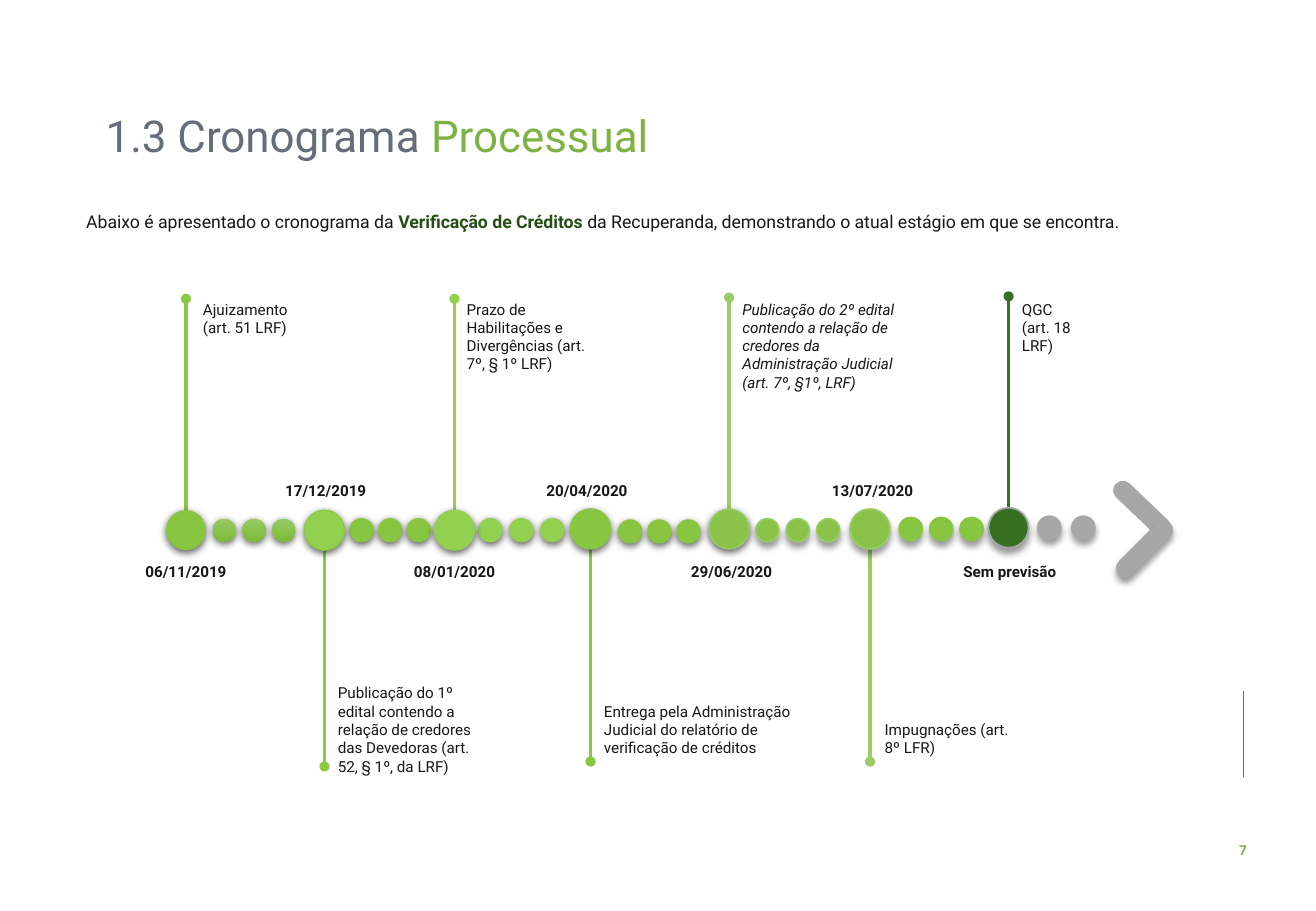
import pptx
import pptx.dml.color
import pptx.enum.shapes
import pptx.enum.text
import pptx.oxml
import pptx.oxml.ns
import pptx.util
from pptx.util import Inches

RGBColor = pptx.dml.color.RGBColor
SHAPE = pptx.enum.shapes.MSO_SHAPE
ALIGN = pptx.enum.text.PP_ALIGN
ANCHOR = pptx.enum.text.MSO_ANCHOR

INK = RGBColor(0x18, 0x17, 0x17)
SLATE = RGBColor(0x65, 0x6D, 0x78)
GREY = RGBColor(0xA7, 0xA7, 0xA7)
ACCENT = RGBColor(0x7C, 0xB3, 0x42)
FOREST = RGBColor(0x26, 0x4F, 0x17)
DARK = RGBColor(0x37, 0x70, 0x23)
LEAF = RGBColor(0x88, 0xC6, 0x41)
LEAF_LIGHT = RGBColor(0x8B, 0xC9, 0x44)
LIME = RGBColor(0x92, 0xD0, 0x50)
OLIVE = RGBColor(0x8B, 0xC3, 0x4A)
PALE = RGBColor(0x9C, 0xCC, 0x65)
SHADE_TOP = RGBColor(0x98, 0xCA, 0x65)
SHADE_BOTTOM = RGBColor(0x7C, 0xB9, 0x36)

# opacity %, blur pt, distance pt, rim width pt
TIGHT = (63, 4.5, 1.5, 0.75)
SOFT = (40, 4, 3, 1)

AXIS_Y = 4.36
MARKER_SIZE = 0.33
DOT_SIZE = 0.19
DATE_WIDTH = 1.1

# stem x, knob y, stem colour, marker (top, fill, rim, effect),
# date, date centre, event paragraphs, event box (left, top, width, height)
MILESTONES = [
    (1.53, 2.46, LEAF_LIGHT, (4.2, LEAF, None, TIGHT), "06/11/2019", 1.53,
     ["Ajuizamento (art. 51 LRF)"], (1.58, 2.42, 1.12, 0.4)),
    (2.67, 6.31, LEAF_LIGHT, (4.2, LIME, LEAF_LIGHT, TIGHT), "17/12/2019", 2.68,
     ["Publicação do 1º edital contendo a relação de credores das Devedoras "
      "(art. 52, § 1º, da LRF)"], (2.69, 5.58, 1.43, 0.71)),
    (3.74, 2.46, LIME, (4.2, LIME, LIME, TIGHT), "08/01/2020", 3.74,
     ["Prazo de Habilitações e Divergências (art. 7º, § 1º LRF)"],
     (3.75, 2.42, 1.3, 0.56)),
    (4.86, 6.27, LEAF, (4.19, LEAF, LEAF, TIGHT), "20/04/2020", 4.83,
     ["Entrega pela Administração Judicial do relatório de verificação de "
      "créditos"], (4.88, 5.73, 1.78, 0.56)),
    (6, 2.45, PALE, (4.19, OLIVE, PALE, TIGHT), "29/06/2020", 6.02,
     ["Publicação do 2º edital contendo a relação de credores da "
      "Administração Judicial (art. 7º, §1º, LRF)"], (6.02, 2.42, 1.57, 0.71)),
    (7.16, 6.27, PALE, (4.19, OLIVE, PALE, SOFT), "13/07/2020", 7.18,
     ["Impugnações (art. 8º LFR)"], (7.19, 5.88, 1.24, 0.4)),
    (8.3, 2.44, DARK, (4.18, DARK, GREY, SOFT), "Sem previsão", 8.31,
     ["QGC", "(art. 18 LRF)"], (8.32, 2.42, 0.8, 0.4)),
]
ITALIC_EVENT = "29/06/2020"

# first left, step, count, top, fill (a list is a gradient), rim, effect
DOT_RUNS = [
    (1.75, 0.245, 3, 4.27, [SHADE_TOP, SHADE_BOTTOM], None, TIGHT),
    (2.88, 0.235, 3, 4.27, LEAF, LEAF, TIGHT),
    (3.94, 0.255, 3, 4.27, LIME, LIME, TIGHT),
    (5.09, 0.24, 3, 4.28, LEAF, LEAF, TIGHT),
    (6.22, 0.25, 3, 4.27, OLIVE, PALE, SOFT),
    (7.4, 0.25, 3, 4.26, LEAF, LEAF, SOFT),
    (8.54, 0.28, 2, 4.25, GREY, GREY, SOFT),
]


def add_xml(parent, tag, **attributes):
    node = parent.makeelement(pptx.oxml.ns.qn(tag),
                              {k: str(v) for k, v in attributes.items()})
    parent.append(node)
    return node


class TimelineSlide:
    font = "Roboto"
    inset = (0.09, 0.05)

    def __init__(self, slide):
        self.slide = slide

    def text(self, box, paragraphs, anchor=ANCHOR.TOP, **paragraph_format):
        """Each paragraph is a list of (text, font values) runs."""
        area = self.slide.shapes.add_textbox(*map(Inches, box))
        frame = area.text_frame
        side, edge = map(Inches, self.inset)
        settings = {"word_wrap": True, "vertical_anchor": anchor,
                    "margin_left": side, "margin_right": side,
                    "margin_top": edge, "margin_bottom": edge}
        for name, value in settings.items():
            setattr(frame, name, value)
        for index, runs in enumerate(paragraphs):
            paragraph = frame.add_paragraph() if index else frame.paragraphs[0]
            for name, value in paragraph_format.items():
                setattr(paragraph, name, value)
            for words, values in runs:
                run = paragraph.add_run()
                run.text = words
                style = {"name": self.font, "size": 9, "color": INK, **values}
                run.font.color.rgb = style.pop("color")
                style["size"] = pptx.util.Pt(style["size"])
                for name, value in style.items():
                    setattr(run.font, name, value)
        return frame

    def line(self, start, end, color, width, oval_start=False):
        connector = self.slide.shapes.add_connector(
            pptx.enum.shapes.MSO_CONNECTOR.STRAIGHT,
            *map(Inches, (*start, *end)))
        connector.line.color.rgb = color
        connector.line.width = pptx.util.Pt(width)
        if oval_start:
            add_xml(connector.line._ln, "a:headEnd", type="oval")
        add_xml(connector._element.spPr, "a:effectLst")

    def shape(self, kind, box, fill, rim=None, effect=None):
        figure = self.slide.shapes.add_shape(kind, *map(Inches, box))
        if isinstance(fill, list):
            figure.fill.gradient()
            figure.fill.gradient_angle = 270
            for stop, color in zip(figure.fill.gradient_stops, fill):
                stop.color.rgb = color
        else:
            figure.fill.solid()
            figure.fill.fore_color.rgb = fill
        if rim is None:
            figure.line.fill.background()
        else:
            figure.line.color.rgb = rim
            figure.line.width = pptx.util.Pt(effect[3])
        figure.shadow.inherit = False
        if effect:
            self.drop_shadow(figure, *effect[:3])
        return figure

    def drop_shadow(self, figure, opacity, blur, distance):
        effects = figure._element.spPr.find(pptx.oxml.ns.qn("a:effectLst"))
        shadow = add_xml(effects, "a:outerShdw",
                         blurRad=pptx.util.Pt(blur), dist=pptx.util.Pt(distance),
                         dir=5400000, rotWithShape=0)
        color = add_xml(shadow, "a:srgbClr", val="000000")
        add_xml(color, "a:alpha", val=opacity * 1000)

    def circle(self, left, top, size, fill, rim, effect):
        self.shape(SHAPE.OVAL, (left, top, size, size), fill, rim, effect)

    def arrow_bar(self, left, top, rotation, effect=None):
        bar = self.shape(SHAPE.ROUNDED_RECTANGLE, (left, top, 0.6, 0.16),
                         GREY, effect=effect)
        bar.adjustments[0] = 0.5
        bar.rotation = rotation


def main():
    deck = pptx.Presentation()
    deck.slide_width, deck.slide_height = Inches(10.83), Inches(7.5)
    page = TimelineSlide(deck.slides.add_slide(deck.slide_layouts[6]))

    page.line((10.23, 5.69), (10.23, 6.4), SLATE, 0.5)
    page.text((10.06, 6.88, 0.34, 0.24),
              [[("7", {"size": 8.1, "color": ACCENT, "bold": True})]],
              alignment=ALIGN.CENTER)
    page.text((0.78, 0.87, 8.18, 0.53),
              [[("1.3 Cronograma ", {"size": 26, "color": SLATE}),
                ("Processual", {"size": 26, "color": ACCENT})]],
              anchor=ANCHOR.MIDDLE, line_spacing=0.9)
    intro = page.text(
        (0.31, 1.66, 10.17, 0.3),
        [[("Abaixo é apresentado o cronograma da ", {"size": 10.5}),
          ("Verificação de Créditos ",
           {"size": 10.5, "color": FOREST, "bold": True}),
          ("da Recuperanda, demonstrando o atual estágio em que se encontra.",
           {"size": 10.5})]],
        alignment=ALIGN.JUSTIFY, line_spacing=1.14)
    intro.paragraphs[0]._p.get_or_add_pPr().set("indent", str(Inches(0.31)))

    for x, knob_y, color, *_ in MILESTONES:
        page.line((x, knob_y), (x, AXIS_Y), color, 2, oval_start=True)
    for first, step, count, top, fill, rim, effect in DOT_RUNS:
        for index in range(count):
            page.circle(first + index * step, top, DOT_SIZE, fill, rim, effect)
    for x, knob_y, _, marker, date, date_x, event, event_box in MILESTONES:
        top, fill, rim, effect = marker
        page.circle(x - MARKER_SIZE / 2, top, MARKER_SIZE, fill, rim, effect)
        date_y = 4.58 if knob_y < AXIS_Y else 3.91
        page.text((date_x - DATE_WIDTH / 2, date_y, DATE_WIDTH, 0.25),
                  [[(date, {"bold": True})]], alignment=ALIGN.CENTER)
        italic = {"italic": True} if date == ITALIC_EVENT else {}
        page.text(event_box, [[(words, italic)] for words in event])

    page.arrow_bar(9.1, 4.11, 43.7)
    page.arrow_bar(9.12, 4.44, 315, SOFT)
    deck.save("out.pptx")


if __name__ == "__main__":
    main()
